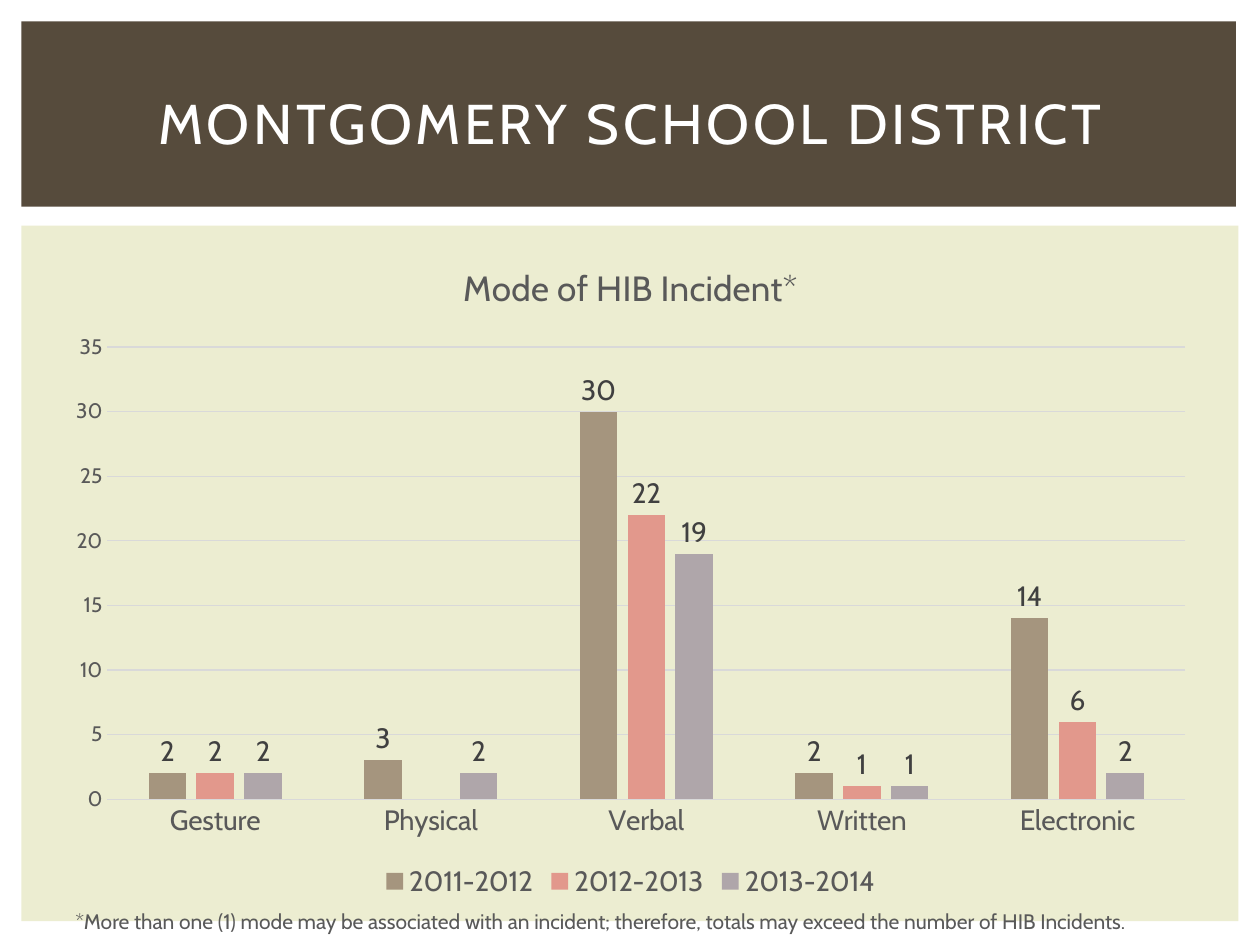
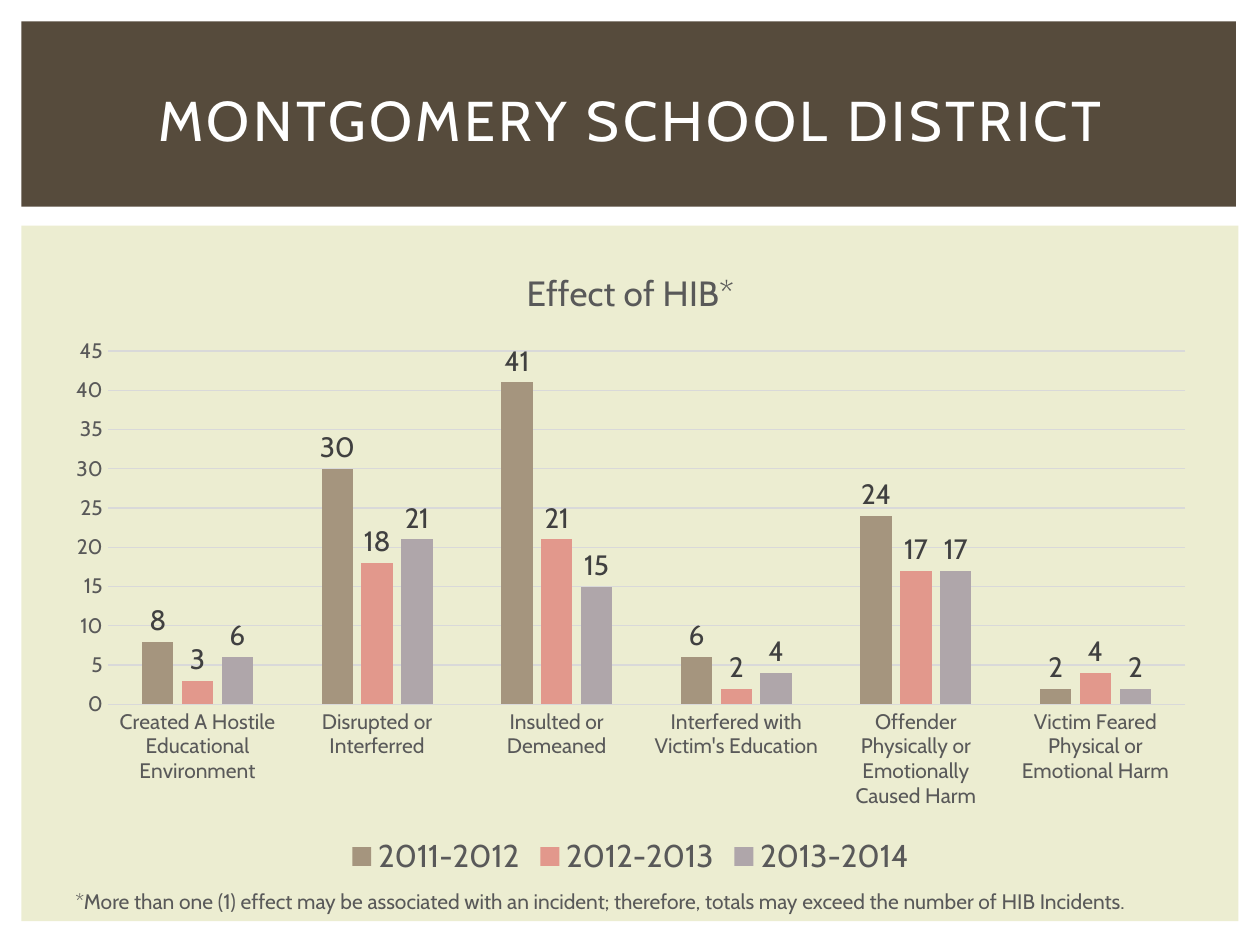
import pptx
import pptx.chart.data
import pptx.dml.color
import pptx.enum.chart
import pptx.enum.shapes
import pptx.enum.text
import pptx.util

Inches = pptx.util.Inches
Pt = pptx.util.Pt

FONT = "Cabin"
HEX = {
    "band": "564B3C", "panel": "ECEDD1", "title": "FFFFFF",
    "text": "595959", "label": "404040", "grid": "D9D9D9",
}
YEARS = {"2011-2012": "A5957E", "2012-2013": "E2988C", "2013-2014": "AFA6AA"}
TITLE = "MONTGOMERY SCHOOL DISTRICT"
NOTE = ("*More than one (1) {} may be associated with an incident; "
        "therefore, totals may exceed the number of HIB Incidents.")
BLOCKS = [
    ("panel", (0.17, 1.79, 9.66, 5.52)),
    ("band", (0.17, 0.17, 9.64, 1.47)),
]

# Each row holds a category and its count in each year.
SLIDES = [
    {
        "head": "Mode of HIB Incident*", "noun": "mode", "max": 35,
        "title_y": 0.39, "chart_y": 1.88, "chart_h": 5.29, "note_y": 7.16,
        "cat_size": 16, "key_size": 16,
        "rows": [
            ("Gesture", 2, 2, 2),
            ("Physical", 3, None, 2),
            ("Verbal", 30, 22, 19),
            ("Written", 2, 1, 1),
            ("Electronic", 14, 6, 2),
        ],
    },
    {
        "head": "Effect of HIB*", "noun": "effect", "max": 45,
        "title_y": 0.37, "chart_y": 1.92, "chart_h": 5.08, "note_y": 7,
        "cat_size": 12, "key_size": 18,
        "rows": [
            ("Created A Hostile Educational Environment", 8, 3, 6),
            ("Disrupted or Interferred", 30, 18, 21),
            ("Insulted or Demeaned", 41, 21, 15),
            ("Interfered with Victim's Education", 6, 2, 4),
            ("Offender Physically or Emotionally Caused Harm", 24, 17, 17),
            ("Victim Feared Physical or Emotional Harm", 2, 4, 2),
        ],
    },
]


def color(name):
    return pptx.dml.color.RGBColor.from_string(HEX.get(name, name))


def style(font, size, name="text"):
    font.name = FONT
    font.size = Pt(size)
    font.bold = False
    font.color.rgb = color(name)


def paint(fill, name):
    fill.solid()
    fill.fore_color.rgb = color(name)


def rule(line):
    line.color.rgb = color("grid")
    line.width = Pt(0.75)


def add_block(slide, name, box):
    block = slide.shapes.add_shape(
        pptx.enum.shapes.MSO_SHAPE.RECTANGLE, *map(Inches, box))
    block.shadow.inherit = False
    paint(block.fill, name)
    block.line.fill.background()


def add_text(slide, text, box, size, name="text"):
    frame = slide.shapes.add_textbox(*map(Inches, box)).text_frame
    frame.word_wrap = True
    para = frame.paragraphs[0]
    para.add_run().text = text
    style(para.font, size, name)
    return frame


def add_title(slide, top):
    frame = add_text(slide, TITLE, (0.42, top, 9.17, 1.15), 32, "title")
    frame.vertical_anchor = pptx.enum.text.MSO_ANCHOR.MIDDLE
    para = frame.paragraphs[0]
    para.alignment = pptx.enum.text.PP_ALIGN.CENTER
    para.runs[0].font._element.set("spc", "200")


def add_bars(slide, item):
    cats, *counts = zip(*item["rows"])
    data = pptx.chart.data.CategoryChartData()
    data.categories = cats
    for year, vals in zip(YEARS, counts):
        data.add_series(year, vals)
    box = (0.42, item["chart_y"], 9.17, item["chart_h"])
    chart = slide.shapes.add_chart(
        pptx.enum.chart.XL_CHART_TYPE.COLUMN_CLUSTERED,
        *map(Inches, box), data).chart
    chart.font.name = FONT
    chart.font.size = Pt(10)

    chart.has_title = True
    para = chart.chart_title.text_frame.paragraphs[0]
    para.add_run().text = item["head"]
    style(para.font, 20)
    chart.chart_title.include_in_layout = False

    chart.has_legend = True
    chart.legend.position = pptx.enum.chart.XL_LEGEND_POSITION.BOTTOM
    chart.legend.include_in_layout = False
    style(chart.legend.font, item["key_size"])

    none = pptx.enum.chart.XL_TICK_MARK.NONE
    axes = (chart.category_axis, item["cat_size"]), (chart.value_axis, 12)
    for axis, size in axes:
        axis.major_tick_mark = axis.minor_tick_mark = none
        style(axis.tick_labels.font, size)
    rule(chart.category_axis.format.line)
    scale = chart.value_axis
    scale.format.line.fill.background()
    scale.has_major_gridlines = True
    rule(scale.major_gridlines.format.line)
    scale.minimum_scale = 0
    scale.maximum_scale = item["max"]
    scale.major_unit = 5

    plot = chart.plots[0]
    plot.gap_width = 219
    plot.overlap = -27
    plot.vary_by_categories = False
    for bars, shade in zip(plot.series, YEARS.values()):
        paint(bars.format.fill, shade)
        bars.invert_if_negative = False
        labels = bars.data_labels
        labels.show_value = True
        labels.position = pptx.enum.chart.XL_LABEL_POSITION.OUTSIDE_END
        style(labels.font, 16, "label")


def main():
    deck = pptx.Presentation()
    deck.slide_width = Inches(10)
    deck.slide_height = Inches(7.5)
    for item in SLIDES:
        slide = deck.slides.add_slide(deck.slide_layouts[6])
        for name, box in BLOCKS:
            add_block(slide, name, box)
        add_bars(slide, item)
        add_text(slide, NOTE.format(item["noun"]),
                 (0.5, item["note_y"], 9.42, 0.3), 12)
        add_title(slide, item["title_y"])
    deck.save("out.pptx")


if __name__ == "__main__":
    main()
